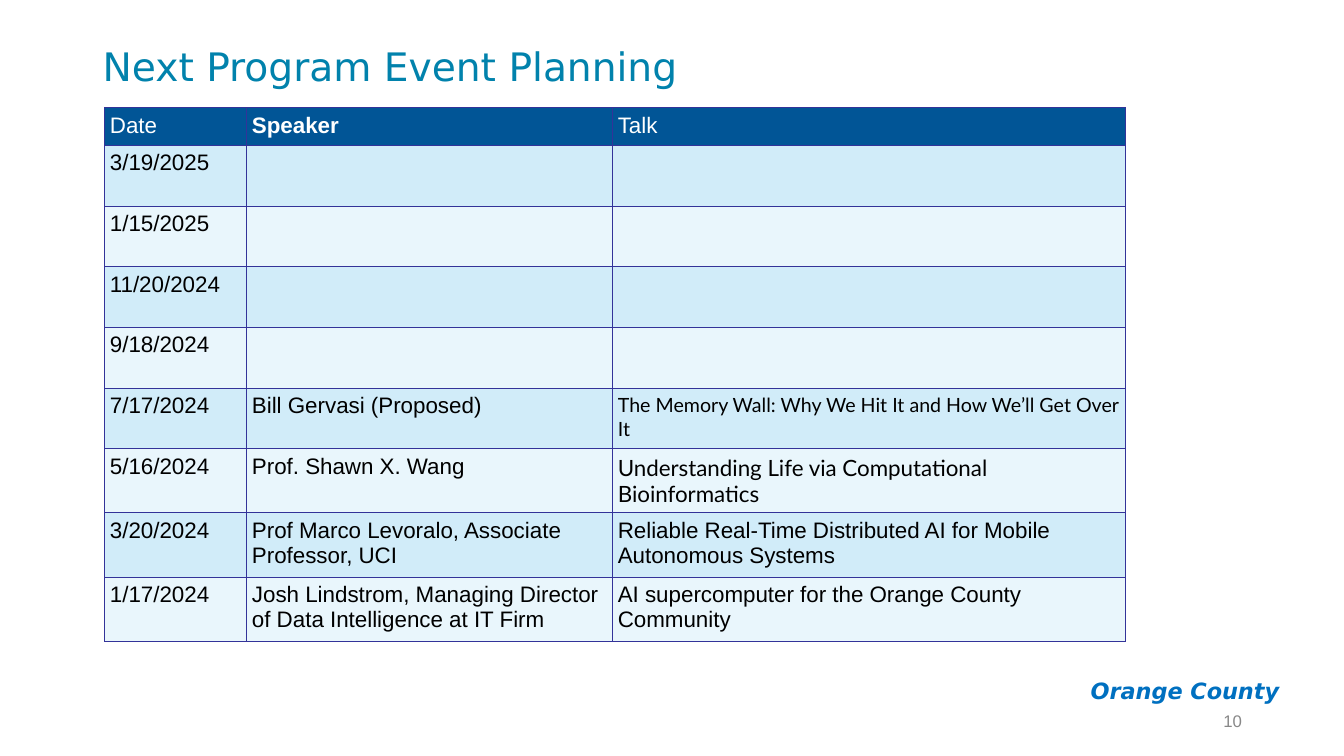
from pptx import Presentation
from pptx.dml.color import RGBColor
from pptx.enum.text import MSO_ANCHOR as Anchor, PP_ALIGN as Align
from pptx.oxml import parse_xml
from pptx.oxml.ns import nsdecls
from pptx.util import Cm, Pt


def style(par, face, size, color, bold=False):
    """Set the font of a whole paragraph."""
    font = par.font
    font.name, font.size, font.bold = face, Pt(size), bold
    font.color.rgb = RGBColor.from_string(color)


def add_text(text, left, top, width, height, inset, anchor):
    """Add a one-paragraph text box and return its paragraph."""
    box = slide.shapes.add_textbox(Cm(left), Cm(top), Cm(width), Cm(height))
    frame = box.text_frame
    frame.word_wrap = True
    frame.vertical_anchor = anchor
    frame.margin_left = frame.margin_right = Cm(0.25)
    frame.margin_top = frame.margin_bottom = Cm(inset)
    par = frame.paragraphs[0]
    par.text = text
    return par


prs = Presentation()
prs.slide_width, prs.slide_height = Cm(33.87), Cm(19.05)
slide = prs.slides.add_slide(prs.slide_layouts[6])

# Footer, title and page number
group = add_text("Orange County", 26.7, 16.81, 5.79, 1.19, 0.25, Anchor.TOP)
group.alignment = Align.RIGHT
style(group, "DejaVu Sans", 16, "0070C0", True)
group.font.italic = True

title = add_text("Next Program Event Planning", 2.34, 0.74, 29.21, 1.98, 0.13, Anchor.MIDDLE)
title.line_spacing = 0.9
style(title, "DejaVu Sans", 28, "0182AC")

page = add_text("10", 23.93, 17.65, 7.62, 1.02, 0.13, Anchor.MIDDLE)
page.alignment = Align.RIGHT
style(page, "Arial", 12, "888888")

# Schedule table
events = [
    ("Date", "Speaker", "Talk"),
    ("3/19/2025", "", ""),
    ("1/15/2025", "", ""),
    ("11/20/2024", "", ""),
    ("9/18/2024", "", ""),
    ("7/17/2024", "Bill Gervasi (Proposed)",
     "The Memory Wall: Why We Hit It and How We’ll Get Over It"),
    ("5/16/2024", "Prof. Shawn X. Wang",
     "Understanding Life via Computational Bioinformatics"),
    ("3/20/2024", "Prof Marco Levoralo, Associate Professor, UCI",
     "Reliable Real-Time Distributed AI for Mobile Autonomous Systems"),
    ("1/17/2024", "Josh Lindstrom, Managing Director of Data Intelligence at IT Firm",
     "AI supercomputer for the Orange County Community"),
]
fonts = {(5, 2): ("Lato", 14), (6, 2): ("Lato", 16)}
widths = [3.58, 9.22, 12.93]
heights = [0.94] + [1.53] * (len(events) - 1)

table = slide.shapes.add_table(len(events), len(widths), Cm(2.64), Cm(2.72),
                               Cm(sum(widths)), Cm(sum(heights))).table
for col, width in zip(table.columns, widths):
    col.width = Cm(width)
for row, height in zip(table.rows, heights):
    row.height = Cm(height)

for r, event in enumerate(events):
    back = "015596" if r == 0 else ("E9F6FC", "D1ECF9")[r % 2]
    for c, text in enumerate(event):
        cell = table.cell(r, c)
        cell.margin_left = cell.margin_right = Cm(0.13)
        cell.margin_top = cell.margin_bottom = Cm(0.13)
        for side in "LRTB":
            cell._tc.get_or_add_tcPr().append(parse_xml(
                f'<a:ln{side} {nsdecls("a")} w="{Pt(0.75)}"><a:solidFill>'
                f'<a:srgbClr val="333399"/></a:solidFill></a:ln{side}>'))
        cell.fill.solid()
        cell.fill.fore_color.rgb = RGBColor.from_string(back)
        par = cell.text_frame.paragraphs[0]
        if text:
            par.text = text
        face, size = fonts.get((r, c), ("Arial", 16))
        style(par, face, size, "000000" if r else "FFFFFF", text == "Speaker")

prs.save("out.pptx")
